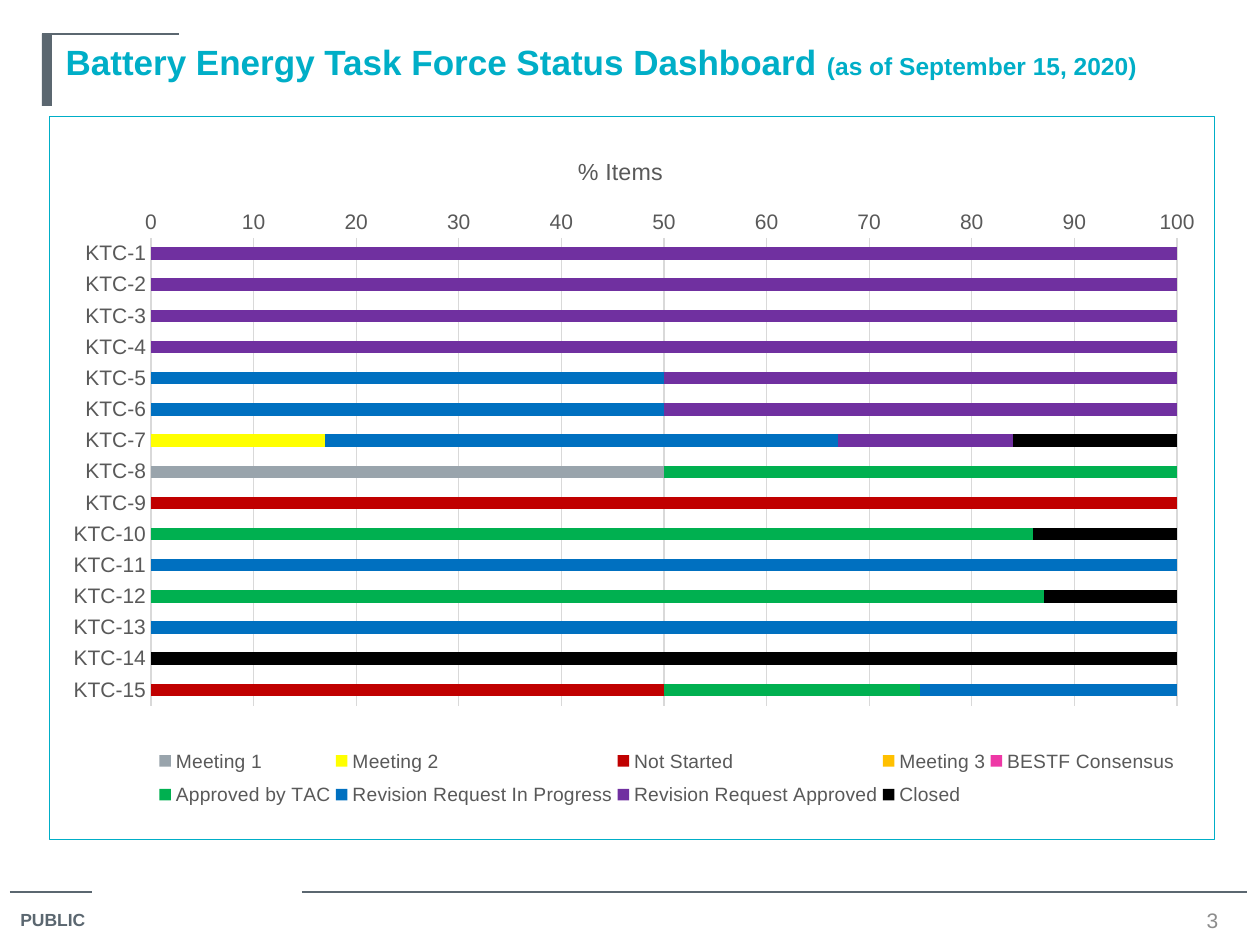
import pptx
import pptx.chart.data
import pptx.dml.color
import pptx.enum.chart
import pptx.enum.shapes
import pptx.enum.text
import pptx.oxml
import pptx.oxml.ns
import pptx.util

PX = 914400 / 126
FONT = "Arial"
COLORS = {
    "teal": "00AEC7", "slate": "5B6770", "number": "8C8C8C",
    "label": "595959", "grid": "D9D9D9", "text": "000000",
}
CATEGORIES = [f"KTC-{number}" for number in range(1, 16)]
# Series name: (colour, {item number: percent})
SERIES = {
    "Not Started": ("C00000", {9: 100, 15: 50}),
    "Meeting 1": ("99A4AC", {8: 50}),
    "Meeting 2": ("FFFF00", {7: 17}),
    "Meeting 3": ("FFC000", {}),
    "BESTF Consensus": ("EE38A6", {}),
    "Approved by TAC": ("00B050", {8: 50, 10: 86, 12: 87, 15: 25}),
    "Revision Request In Progress": (
        "0070C0", {5: 50, 6: 50, 7: 50, 11: 100, 13: 100, 15: 25}),
    "Revision Request Approved": (
        "7030A0", {1: 100, 2: 100, 3: 100, 4: 100, 5: 50, 6: 50, 7: 17}),
    "Closed": ("000000", {7: 16, 10: 14, 12: 13, 14: 100}),
}


def px(*lengths):
    return [pptx.util.Emu(round(length * PX)) for length in lengths]


def rgb(value):
    return pptx.dml.color.RGBColor.from_string(value)


def style_font(font, size, color, bold=False):
    font.name = FONT
    font.size = pptx.util.Pt(size)
    font.bold = bold
    font.color.rgb = rgb(color)


def style_line(line, color):
    line.color.rgb = rgb(color)
    line.width = pptx.util.Pt(0.75)


def add_rule(slide, left, right, y):
    rule = slide.shapes.add_connector(
        pptx.enum.shapes.MSO_CONNECTOR.STRAIGHT, *px(left, y, right, y))
    style_line(rule.line, COLORS["slate"])
    rule._element.spPr.append(pptx.oxml.parse_xml(
        f"<a:effectLst {pptx.oxml.ns.nsdecls('a')}/>"))


def add_label(slide, box, text, size, color, bold=False):
    label = slide.shapes.add_textbox(*px(*box))
    label.text_frame.text = text
    label.text_frame.word_wrap = True
    paragraph = label.text_frame.paragraphs[0]
    style_font(paragraph.runs[0].font, size, color, bold)
    return label


def add_header(slide, left, top, width, height):
    bar = slide.shapes.add_shape(
        pptx.enum.shapes.MSO_SHAPE.RECTANGLE, *px(left, top, 10, height))
    bar.shadow.inherit = False
    bar.fill.solid()
    bar.fill.fore_color.rgb = rgb(COLORS["slate"])
    bar.line.fill.background()
    add_rule(slide, left, left + 137, top)

    title = slide.shapes.title
    title.left, title.top, title.width, title.height = px(
        left + 11, top, width - 11, height)
    frame = title.text_frame
    frame.vertical_anchor = pptx.enum.text.MSO_ANCHOR.TOP
    frame.auto_size = pptx.enum.text.MSO_AUTO_SIZE.NONE
    paragraph = frame.paragraphs[0]
    paragraph.alignment = pptx.enum.text.PP_ALIGN.LEFT
    for text, size in (("Battery Energy Task Force Status Dashboard ", 20),
                       ("(as of September 15, 2020)", 14)):
        run = paragraph.add_run()
        run.text = text
        style_font(run.font, size, COLORS["teal"], bold=True)


def add_footer(slide, left, top, width):
    add_rule(slide, left, left + 82, top)
    add_rule(slide, left + 292, left + width, top)
    add_label(slide, (left - 2, top + 11, 97, 35), "PUBLIC", 10,
              COLORS["slate"], bold=True)
    number = add_label(slide, (left + width - 71, top + 13, 73, 30), "3", 12,
                       COLORS["number"])
    number.text_frame.vertical_anchor = pptx.enum.text.MSO_ANCHOR.MIDDLE
    number.text_frame.paragraphs[0].alignment = pptx.enum.text.PP_ALIGN.CENTER


def set_layout(element, index, inner=False, **fractions):
    """Place a chart part by fractions of the chart's size."""
    for old in element.findall(pptx.oxml.ns.qn("c:layout")):
        element.remove(old)
    target = '<c:layoutTarget val="inner"/>' if inner else ""
    modes = "".join(f'<c:{key}Mode val="edge"/>' for key in "xy")
    values = "".join(
        f'<c:{key} val="{value}"/>' for key, value in fractions.items())
    element.insert(index, pptx.oxml.parse_xml(
        f"<c:layout {pptx.oxml.ns.nsdecls('c')}><c:manualLayout>"
        f"{target}{modes}{values}</c:manualLayout></c:layout>"))


def style_axes(chart):
    category, value = chart.category_axis, chart.value_axis
    for axis in (category, value):
        axis.major_tick_mark = pptx.enum.chart.XL_TICK_MARK.NONE
        axis.minor_tick_mark = pptx.enum.chart.XL_TICK_MARK.NONE
        style_font(axis.tick_labels.font, 12, COLORS["label"])
    category.reverse_order = True
    style_line(category.format.line, COLORS["grid"])
    value.minimum_scale, value.maximum_scale = 0, 100
    value.major_unit = 10
    value.format.line.fill.background()
    value.has_major_gridlines = True
    style_line(value.major_gridlines.format.line, COLORS["grid"])
    title = value.axis_title
    title.text_frame.text = "% Items"
    style_font(title.text_frame.paragraphs[0].runs[0].font, 13.3,
               COLORS["label"])
    set_layout(title._element, 1, x=0.45, y=0.05)


def add_status_chart(slide, left, top, width, height):
    data = pptx.chart.data.CategoryChartData()
    data.categories = CATEGORIES
    for name, (_, percents) in SERIES.items():
        data.add_series(name, [percents.get(item + 1)
                               for item in range(len(CATEGORIES))])
    chart = slide.shapes.add_chart(
        pptx.enum.chart.XL_CHART_TYPE.BAR_STACKED,
        *px(left, top, width, height), data).chart
    chart.has_title = False
    style_font(chart.font, 10, COLORS["text"])

    plot = chart.plots[0]
    plot.gap_width, plot.overlap = 150, 100
    plot.vary_by_categories = False
    bars = list(plot.series)
    for series in bars:
        series.format.fill.solid()
        series.format.fill.fore_color.rgb = rgb(SERIES[series.name][0])
        series.invert_if_negative = False
    # The legend lists "Not Started" after the first two meetings.
    bars[2]._element.addnext(bars[0]._element)

    style_axes(chart)
    chart.has_legend = True
    legend = chart.legend
    legend.position = pptx.enum.chart.XL_LEGEND_POSITION.BOTTOM
    legend.include_in_layout = False
    style_font(legend.font, 11, COLORS["label"])
    set_layout(legend._element, 1, x=0.09, y=0.86, w=0.88, h=0.11)

    chart_element = chart._chartSpace.find(pptx.oxml.ns.qn("c:chart"))
    plot_area = chart_element.find(pptx.oxml.ns.qn("c:plotArea"))
    set_layout(plot_area, 0, inner=True, x=0.087, y=0.168, w=0.881, h=0.647)
    chart_element.addnext(pptx.oxml.parse_xml(
        f"<c:spPr {pptx.oxml.ns.nsdecls('c', 'a')}><a:noFill/>"
        f'<a:ln w="9525"><a:solidFill><a:srgbClr val="{COLORS["teal"]}"/>'
        "</a:solidFill></a:ln></c:spPr>"))


def main():
    presentation = pptx.Presentation()
    presentation.slide_width, presentation.slide_height = px(1260, 945)
    slide = presentation.slides.add_slide(presentation.slide_layouts[5])
    add_footer(slide, 10, 892, 1237)
    add_header(slide, 42, 34, 1176, 72)
    add_status_chart(slide, 49, 116, 1166, 724)
    presentation.save("out.pptx")


if __name__ == "__main__":
    main()
